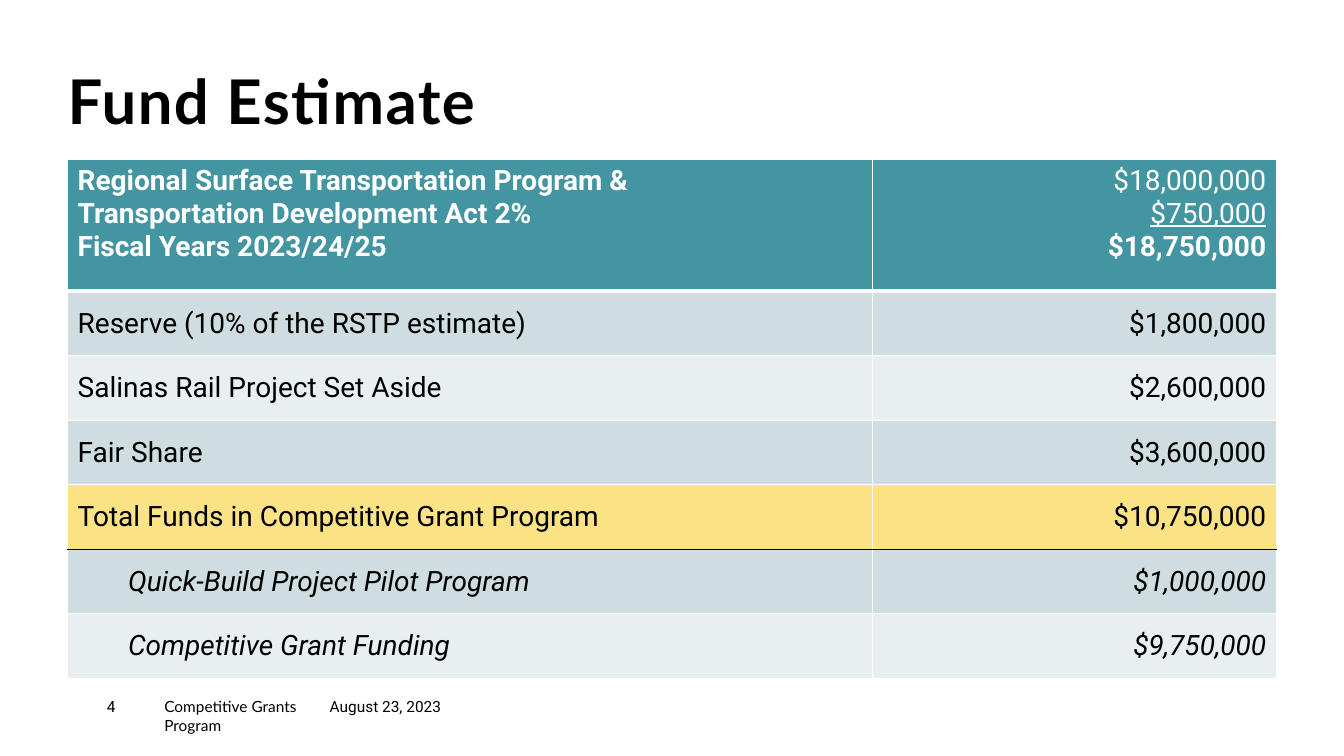
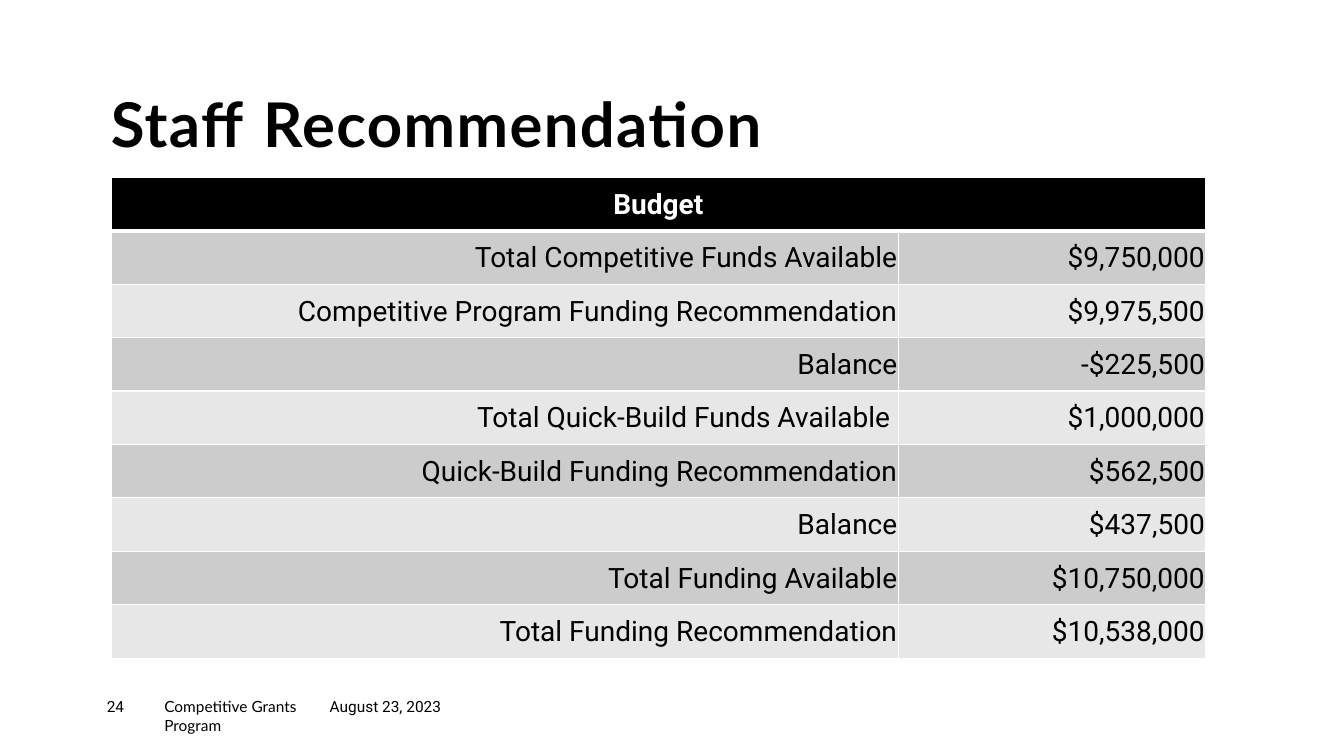
from lxml.etree import SubElement
from pptx import Presentation
from pptx.dml.color import RGBColor
from pptx.enum.text import MSO_ANCHOR as Anchor, PP_ALIGN as Align
from pptx.oxml.ns import qn
from pptx.util import Inches, Pt

HEADING_FONT, BODY_FONT = "Lato", "Roboto"
BLACK, WHITE = "000000", "FFFFFF"
TEAL, YELLOW = "4495A2", "FBE284"
TEAL_BANDS = ("CFDDE0", "E9EFF0")
GRAY_BANDS = ("CCCCCC", "E7E7E7")
THIN_WHITE, THICK_WHITE, THIN_BLACK = (WHITE, 1), (WHITE, 3), (BLACK, 1)

FUND_ROWS = [
    ("Regional Surface Transportation Program &\n"
     "Transportation Development Act 2%\nFiscal Years 2023/24/25",
     "$18,000,000\n$750,000\n$18,750,000"),
    ("Reserve (10% of the RSTP estimate)", "$1,800,000"),
    ("Salinas Rail Project Set Aside", "$2,600,000"),
    ("Fair Share", "$3,600,000"),
    ("Total Funds in Competitive Grant Program", "$10,750,000"),
    ("Quick-Build Project Pilot Program", "$1,000,000"),
    ("Competitive Grant Funding", "$9,750,000"),
]
FUND_TOTAL_ROW = 4

BUDGET_ROWS = [
    ("Budget", ""),
    ("Total Competitive Funds Available", "$9,750,000"),
    ("Competitive Program Funding Recommendation", "$9,975,500"),
    ("Balance", "-$225,500"),
    ("Total Quick-Build Funds Available ", "$1,000,000"),
    ("Quick-Build Funding Recommendation", "$562,500"),
    ("Balance", "$437,500"),
    ("Total Funding Available", "$10,750,000"),
    ("Total Funding Recommendation", "$10,538,000"),
]


def color(value):
    return RGBColor.from_string(value)


def style_runs(paragraph, font_name, size, text_color, bold=False):
    for run in paragraph.runs:
        run.font.name = font_name
        run.font.size = Pt(size)
        run.font.bold = bold
        run.font.color.rgb = color(text_color)


def add_text(slide, box, text, font_name, size, bold=False, anchor=Anchor.TOP):
    shape = slide.shapes.add_textbox(*map(Inches, box))
    text_frame = shape.text_frame
    text_frame.word_wrap = True
    text_frame.vertical_anchor = anchor
    text_frame.margin_left = text_frame.margin_right = 0
    text_frame.margin_top = text_frame.margin_bottom = 0
    text_frame.text = text
    paragraph = text_frame.paragraphs[0]
    style_runs(paragraph, font_name, size, BLACK, bold)
    return paragraph


def add_title(slide, box, text):
    paragraph = add_text(slide, box, text, HEADING_FONT, 44, True, Anchor.BOTTOM)
    paragraph.line_spacing = 0.9
    for run in paragraph.runs:
        run.font._element.set("spc", "100")


def add_footer(slide, number, left=1.06, top=6.92):
    parts = [
        (0, 0.57, str(number), BODY_FONT),
        (0.57, 1.44, "Competitive Grants Program", HEADING_FONT),
        (2.21, 1.44, "August 23, 2023", BODY_FONT),
    ]
    for offset, width, text, font_name in parts:
        add_text(slide, (left + offset, top, width, 0.27), text, font_name, 11)


def set_borders(cell, top, bottom):
    properties = cell._tc.get_or_add_tcPr()
    sides = {"L": THIN_WHITE, "R": THIN_WHITE, "T": top, "B": bottom}
    for side, (line_color, width) in sides.items():
        line = SubElement(properties, qn(f"a:ln{side}"), w=str(Pt(width)))
        fill = SubElement(line, qn("a:solidFill"))
        SubElement(fill, qn("a:srgbClr"), val=line_color)


def add_money_table(slide, left, top, widths, heights, rows, fills,
                    label_align=Align.LEFT, rules=None):
    edges = {1: THICK_WHITE, **(rules or {})}
    frame = slide.shapes.add_table(
        len(rows), len(widths), Inches(left), Inches(top),
        Inches(sum(widths)), Inches(sum(heights)))
    table = frame.table
    for column, width in zip(table.columns, widths):
        column.width = Inches(width)
    for index, values in enumerate(rows):
        table.rows[index].height = Inches(heights[index])
        for cell, text, align in zip(table.rows[index].cells, values,
                                     (label_align, Align.RIGHT)):
            set_borders(cell, edges.get(index, THIN_WHITE),
                        edges.get(index + 1, THIN_WHITE))
            cell.fill.solid()
            cell.fill.fore_color.rgb = color(fills[index])
            cell.vertical_anchor = Anchor.MIDDLE
            cell.text_frame.text = text
            for paragraph in cell.text_frame.paragraphs:
                paragraph.alignment = align
                style_runs(paragraph, BODY_FONT, 20,
                           BLACK if index else WHITE, index == 0)
    return table


def banded_fills(header, bands, count):
    return [header] + [bands[index % 2] for index in range(count - 1)]


def build_fund_estimate(presentation):
    slide = presentation.slides.add_slide(presentation.slide_layouts[6])
    add_title(slide, (0.67, 0.7, 8.27, 0.67), "Fund Estimate")
    fills = banded_fills(TEAL, TEAL_BANDS, len(FUND_ROWS))
    fills[FUND_TOTAL_ROW] = YELLOW
    table = add_money_table(
        slide, 0.67, 1.58, (7.98, 4.01), [1.31] + [0.64] * 6, FUND_ROWS, fills,
        rules={FUND_TOTAL_ROW + 1: THIN_BLACK})
    for cell in table.rows[0].cells:
        cell.vertical_anchor = Anchor.TOP
    program_amount, act_amount, _ = table.cell(0, 1).text_frame.paragraphs
    for paragraph in (program_amount, act_amount):
        paragraph.runs[0].font.bold = False
    act_amount.runs[0].font.underline = True
    for index in range(FUND_TOTAL_ROW + 1, len(FUND_ROWS)):
        for cell in table.rows[index].cells:
            cell.text_frame.paragraphs[0].runs[0].font.italic = True
        label = table.cell(index, 0).text_frame.paragraphs[0]
        label.level = 1
        label._p.get_or_add_pPr().set("marL", str(Inches(0.5)))
    add_footer(slide, 4)


def build_staff_recommendation(presentation):
    slide = presentation.slides.add_slide(presentation.slide_layouts[6])
    add_title(slide, (1.1, 0.93, 6.8, 0.67), "Staff Recommendation")
    count = len(BUDGET_ROWS)
    table = add_money_table(
        slide, 1.1, 1.76, (7.81, 3.05), [0.53] * count, BUDGET_ROWS,
        banded_fills(BLACK, GRAY_BANDS, count), Align.RIGHT)
    for cell in table.iter_cells():
        cell.margin_left = cell.margin_right = cell.margin_top = Inches(0.01)
        cell.margin_bottom = 0
    heading = table.cell(0, 0)
    heading.merge(table.cell(0, 1))
    heading.text_frame.paragraphs[0].alignment = Align.CENTER
    add_footer(slide, 24)


def main():
    presentation = Presentation()
    presentation.slide_width = Inches(13.33)
    presentation.slide_height = Inches(7.5)
    build_fund_estimate(presentation)
    build_staff_recommendation(presentation)
    presentation.save("out.pptx")


if __name__ == "__main__":
    main()
